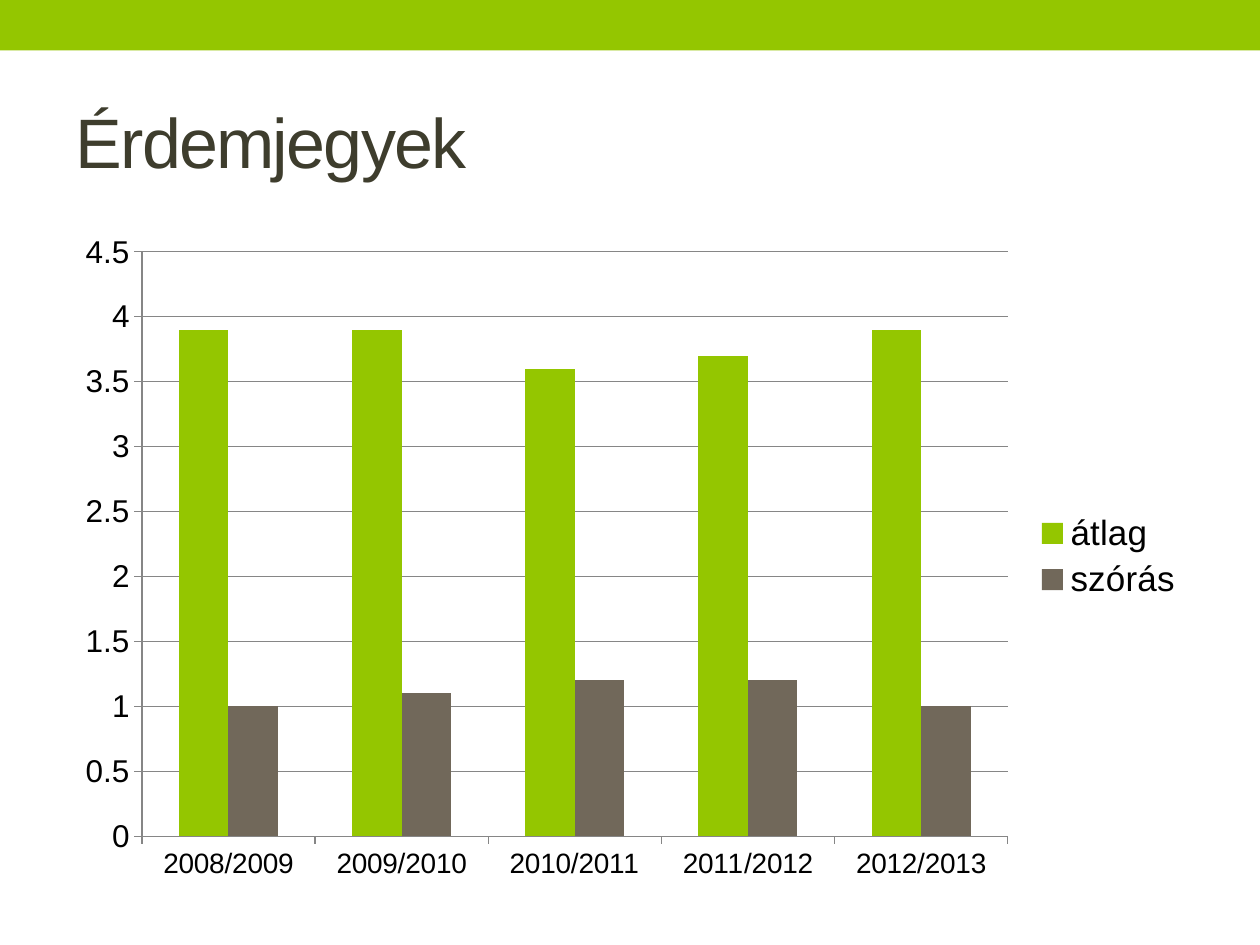
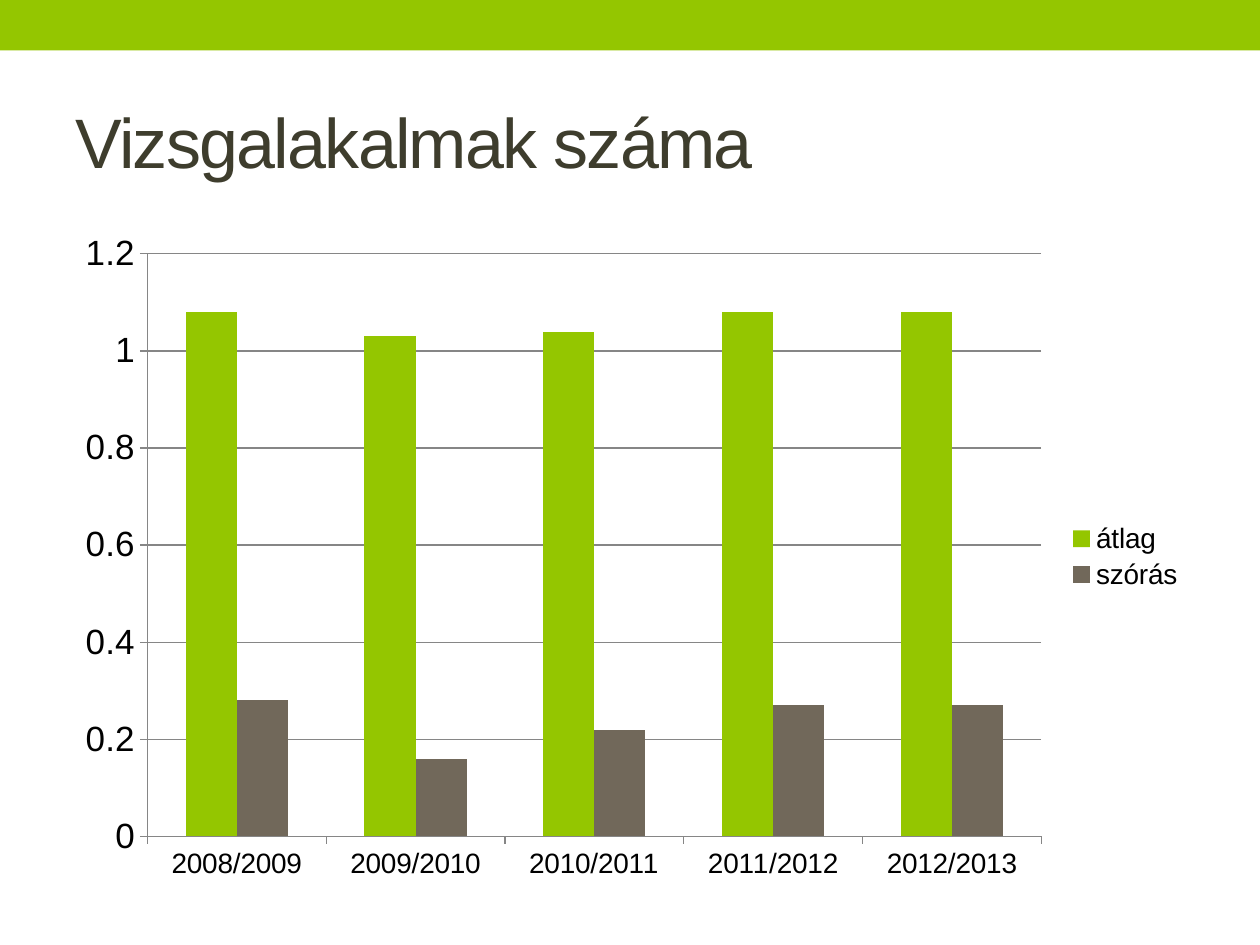
from dataclasses import dataclass

from pptx import Presentation
from pptx.chart.data import CategoryChartData
from pptx.dml.color import RGBColor
from pptx.enum.chart import XL_CHART_TYPE as ChartType
from pptx.enum.chart import XL_LEGEND_POSITION as LegendPosition
from pptx.enum.chart import XL_TICK_MARK as TickMark
from pptx.enum.shapes import MSO_SHAPE as Shape
from pptx.enum.text import MSO_ANCHOR as Anchor
from pptx.enum.text import MSO_AUTO_SIZE as AutoSize
from pptx.enum.text import PP_ALIGN as Align
from pptx.util import Cm, Pt

COLORS = {
    "green": "94C600",
    "brown": "71685A",
    "title": "3E3D2D",
    "text": "000000",
    "axis": "868686",
}
FONT = "Arial"
PAGE_WIDTH, PAGE_HEIGHT = Cm(25.4), Cm(19.05)
MARGIN = Cm(1.27)
CONTENT_WIDTH = PAGE_WIDTH - 2 * MARGIN
YEARS = [f"{year}/{year + 1}" for year in range(2008, 2013)]
SERIES_COLORS = {"átlag": "green", "szórás": "brown"}


@dataclass
class ChartPage:
    title: str
    means: list[float]
    deviations: list[float]
    axis_maximum: float
    axis_step: float
    value_size: int
    legend_size: int


PAGES = [
    ChartPage("Érdemjegyek", [3.9, 3.9, 3.6, 3.7, 3.9], [1, 1.1, 1.2, 1.2, 1],
              4.5, 0.5, 18, 20),
    ChartPage("Vizsgalakalmak száma", [1.08, 1.03, 1.04, 1.08, 1.08],
              [0.28, 0.16, 0.22, 0.27, 0.27], 1.2, 0.2, 20, 16),
]


def color(name: str) -> RGBColor:
    return RGBColor.from_string(COLORS[name])


def style_font(font, size: int, color_name: str = "text") -> None:
    font.name = FONT
    font.size = Pt(size)
    font.bold = False
    font.color.rgb = color(color_name)


def style_line(line) -> None:
    line.color.rgb = color("axis")
    line.width = Pt(0.75)


def add_band(page) -> None:
    band = page.shapes.add_shape(Shape.RECTANGLE, 0, 0, PAGE_WIDTH, Cm(1.02))
    band.shadow.inherit = False
    band.fill.solid()
    band.fill.fore_color.rgb = color("green")
    band.line.fill.background()


def set_title(page, text: str) -> None:
    title = page.shapes.title
    title.left, title.top = MARGIN, Cm(1.47)
    title.width, title.height = CONTENT_WIDTH, Cm(2.74)
    frame = title.text_frame
    frame.text = text
    frame.word_wrap = True
    frame.auto_size = AutoSize.NONE
    frame.vertical_anchor = Anchor.MIDDLE
    para = frame.paragraphs[0]
    para.alignment = Align.LEFT
    style_font(para.font, 40, "title")
    para.runs[0].font._element.set("spc", "-100")


def style_axis(axis, size: int) -> None:
    axis.major_tick_mark = TickMark.OUTSIDE
    axis.minor_tick_mark = TickMark.NONE
    style_font(axis.tick_labels.font, size)
    style_line(axis.format.line)


def add_column_chart(page, content: ChartPage) -> None:
    data = CategoryChartData()
    data.categories = YEARS
    for name, values in zip(SERIES_COLORS, (content.means, content.deviations)):
        data.add_series(name, values)
    chart = page.shapes.add_chart(ChartType.COLUMN_CLUSTERED, MARGIN, Cm(4.45),
                                  CONTENT_WIDTH, Cm(13.54), data).chart
    chart.has_title = False
    style_font(chart.font, 10)

    style_axis(chart.category_axis, 16)
    value_axis = chart.value_axis
    style_axis(value_axis, content.value_size)
    value_axis.minimum_scale = 0
    value_axis.maximum_scale = content.axis_maximum
    value_axis.major_unit = content.axis_step
    value_axis.has_major_gridlines = True
    style_line(value_axis.major_gridlines.format.line)

    chart.has_legend = True
    chart.legend.position = LegendPosition.RIGHT
    chart.legend.include_in_layout = False
    style_font(chart.legend.font, content.legend_size)

    plot = chart.plots[0]
    plot.gap_width = 150
    plot.overlap = 0
    plot.vary_by_categories = False
    for series in plot.series:
        series.format.fill.solid()
        series.format.fill.fore_color.rgb = color(SERIES_COLORS[series.name])


def main() -> None:
    deck = Presentation()
    deck.slide_width, deck.slide_height = PAGE_WIDTH, PAGE_HEIGHT
    title_only = deck.slide_layouts.get_by_name("Title Only")
    for content in PAGES:
        page = deck.slides.add_slide(title_only)
        add_band(page)
        set_title(page, content.title)
        add_column_chart(page, content)
    deck.save("out.pptx")


if __name__ == "__main__":
    main()
